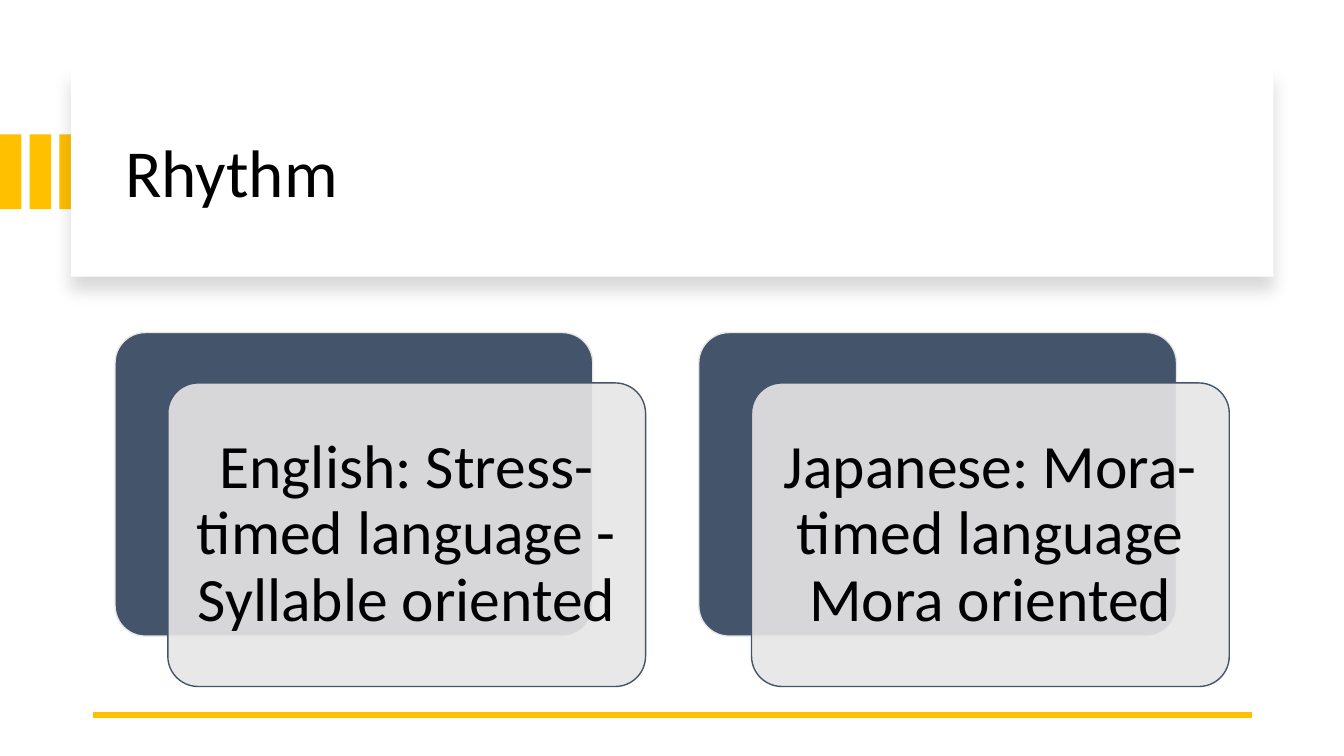
from dataclasses import dataclass

from lxml.etree import SubElement
from pptx import Presentation
from pptx.dml.color import RGBColor
from pptx.enum.shapes import MSO_CONNECTOR, MSO_SHAPE
from pptx.enum.text import MSO_ANCHOR, MSO_AUTO_SIZE, PP_ALIGN
from pptx.oxml.ns import qn
from pptx.util import Cm, Pt

COLOURS = {
    "accent": "FFC000",
    "panel": "FFFFFF",
    "slate": "44546A",
    "card": "E7E6E6",
    "text": "000000",
}
FONT = "Calibri"
CARD_WIDTH, CARD_HEIGHT = 12.04, 7.65
CARD_SHIFT_X, CARD_SHIFT_Y = 1.33, 1.27
CARD_TOP, CARD_PITCH = 8.38, 14.71
STRIPE_WIDTH, STRIPE_PITCH = 0.54, 0.75


@dataclass
class Block:
    left: float
    top: float
    width: float
    height: float
    fill: str
    line: str | None = None
    kind: MSO_SHAPE = MSO_SHAPE.RECTANGLE
    opacity: int = 100


def colour(name: str) -> RGBColor:
    return RGBColor.from_string(COLOURS[name])


def add_alpha(colour_element, percent: int) -> None:
    SubElement(colour_element, qn("a:alpha"), val=str(percent * 1000))


def draw_block(shapes, block: Block):
    shape = shapes.add_shape(
        block.kind, Cm(block.left), Cm(block.top), Cm(block.width), Cm(block.height)
    )
    shape.shadow.inherit = False
    shape.fill.solid()
    shape.fill.fore_color.rgb = colour(block.fill)
    if block.opacity < 100:
        add_alpha(shape._element.spPr.find(f".//{qn('a:srgbClr')}"), block.opacity)
    if block.line:
        shape.line.color.rgb = colour(block.line)
        shape.line.width = Pt(1)
    else:
        shape.line.fill.background()
    if block.kind == MSO_SHAPE.ROUNDED_RECTANGLE:
        shape.adjustments[0] = 0.1
    return shape


def add_shadow(shape) -> None:
    effects = shape._element.spPr.find(qn("a:effectLst"))
    shadow = SubElement(
        effects, qn("a:outerShdw"), blurRad=str(Pt(11)), dist=str(Pt(10)),
        dir="5400000", algn="t", rotWithShape="0",
    )
    add_alpha(SubElement(shadow, qn("a:srgbClr"), val=COLOURS["text"]), 15)


def write_text(shape, text: str, size: int, align: PP_ALIGN, margins: dict) -> None:
    frame = shape.text_frame
    frame_format = {
        "word_wrap": True,
        "auto_size": MSO_AUTO_SIZE.NONE,
        "vertical_anchor": MSO_ANCHOR.MIDDLE,
        **margins,
    }
    for name, value in frame_format.items():
        setattr(frame, name, value)
    para = frame.paragraphs[0]
    para.alignment = align
    para.line_spacing = 0.9
    span = para.add_run()
    span.text = text
    for name, value in {"name": FONT, "size": Pt(size), "bold": False}.items():
        setattr(span.font, name, value)
    span.font.color.rgb = colour("text")


def draw_card(page, left: float, text: str) -> None:
    group = page.shapes.add_group_shape()
    rounded = MSO_SHAPE.ROUNDED_RECTANGLE
    draw_block(group.shapes, Block(
        left, CARD_TOP, CARD_WIDTH, CARD_HEIGHT, "slate", "card", rounded))
    card = draw_block(group.shapes, Block(
        left + CARD_SHIFT_X, CARD_TOP + CARD_SHIFT_Y, CARD_WIDTH, CARD_HEIGHT,
        "card", "slate", rounded, 90))
    sides = ("left", "top", "right", "bottom")
    margins = {f"margin_{side}": Cm(0.45) for side in sides}
    write_text(card, text, 44, PP_ALIGN.CENTER, margins)


def main() -> None:
    deck = Presentation()
    deck.slide_width, deck.slide_height = Cm(33.87), Cm(19.05)
    page = deck.slides.add_slide(deck.slide_layouts[5])

    # Accent stripes and title panel
    stripes = page.shapes.add_group_shape()
    for index in range(3):
        draw_block(stripes.shapes, Block(
            index * STRIPE_PITCH, 3.39, STRIPE_WIDTH, 1.88, "accent"))
    panel = draw_block(page.shapes, Block(1.79, 1.7, 30.3, 5.27, "panel"))
    add_shadow(panel)

    # Title, raised above its panel
    title = page.shapes.title
    place = {"left": 2.9, "top": 2.26, "width": 28.27, "height": 4.32}
    for name, value in place.items():
        setattr(title, name, Cm(value))
    write_text(title, "Rhythm", 48, PP_ALIGN.LEFT, {})
    panel._element.addnext(title._element)

    # Bottom rule
    rule = page.shapes.add_connector(
        MSO_CONNECTOR.STRAIGHT, Cm(31.55), Cm(18.01), Cm(2.34), Cm(18.01))
    rule.line.color.rgb = colour("accent")
    rule.line.width = Pt(4.5)
    SubElement(rule._element.spPr, qn("a:effectLst"))

    # Language cards
    languages = (
        "English: Stress-timed language - Syllable oriented",
        "Japanese: Mora-timed language Mora oriented",
    )
    for index, text in enumerate(languages):
        draw_card(page, 2.9 + index * CARD_PITCH, text)

    deck.save("out.pptx")


if __name__ == "__main__":
    main()
